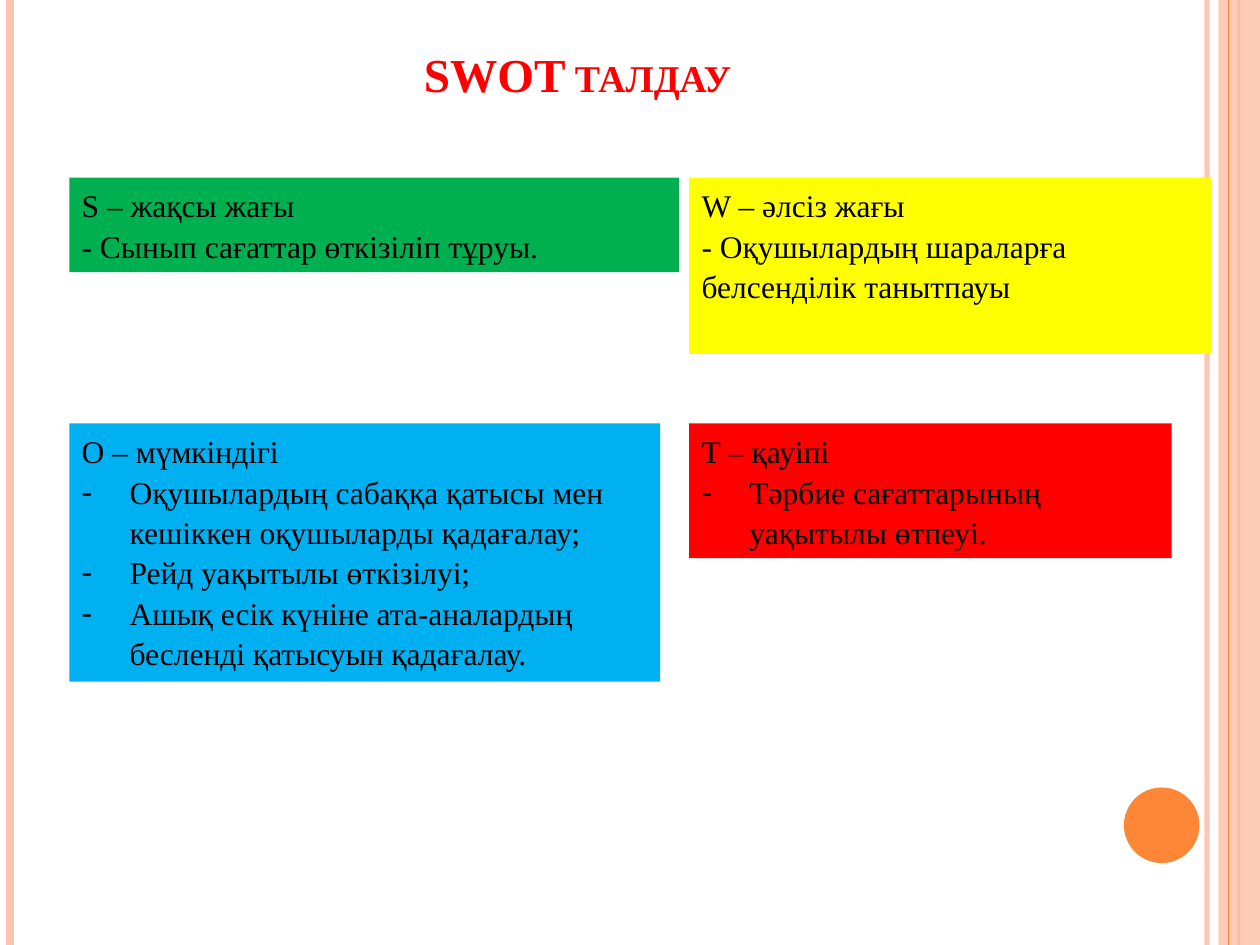
from lxml.etree import SubElement
from pptx import Presentation
from pptx.dml.color import RGBColor
from pptx.enum.shapes import MSO_CONNECTOR, MSO_SHAPE
from pptx.enum.text import MSO_ANCHOR, PP_ALIGN
from pptx.oxml.ns import qn
from pptx.util import Inches, Pt

PEACH = RGBColor(0xFE, 0xC3, 0xAE)
ORANGE = RGBColor(0xFE, 0x86, 0x37)
GREEN = RGBColor(0x00, 0xB0, 0x50)
YELLOW = RGBColor(0xFF, 0xFF, 0x00)
BLUE = RGBColor(0x00, 0xB0, 0xF0)
RED = RGBColor(0xFF, 0x00, 0x00)
BLACK = RGBColor(0x00, 0x00, 0x00)
FONT = "Times New Roman"
WIDTH, HEIGHT = 10, 7.5
LEFT, RIGHT = 0.55, 5.47
TOP, BOTTOM = 1.41, 3.36
INDENT = 0.38

QUADRANTS = [
    (LEFT, TOP, 4.84, 0.75, GREEN,
     ["S – жақсы жағы", "- Сынып сағаттар өткізіліп тұруы."], []),
    (RIGHT, TOP, 4.14, 1.4, YELLOW,
     ["W – әлсіз жағы", "- Оқушылардың шараларға белсенділік танытпауы"], []),
    (LEFT, BOTTOM, 4.69, 2.05, BLUE, ["O – мүмкіндігі"],
     ["Оқушылардың сабаққа қатысы мен кешіккен оқушыларды қадағалау;",
      "Рейд уақытылы өткізілуі;",
      "Ашық есік күніне ата-аналардың бесленді қатысуын қадағалау."]),
    (RIGHT, BOTTOM, 3.83, 1.07, RED, ["T – қауіпі"],
     ["Тәрбие сағаттарының уақытылы өтпеуі."]),
]


def set_alpha(fill_parent, percent):
    color = fill_parent.find(qn("a:solidFill"))[0]
    SubElement(color, qn("a:alpha"), val=str(percent * 1000))


def add_stripe(slide, x, color, width, alpha=100):
    line = slide.shapes.add_connector(
        MSO_CONNECTOR.STRAIGHT, Inches(x), 0, Inches(x), Inches(HEIGHT))
    line.line.color.rgb = color
    line.line.width = Pt(width)
    sp_pr = line._element.spPr
    if alpha < 100:
        set_alpha(sp_pr.find(qn("a:ln")), alpha)
    SubElement(sp_pr, qn("a:effectLst"))


def add_block(slide, kind, left, top, width, height, color):
    sp = slide.shapes.add_shape(
        kind, Inches(left), Inches(top), Inches(width), Inches(height))
    sp.shadow.inherit = False
    sp.fill.solid()
    sp.fill.fore_color.rgb = color
    sp.line.fill.background()
    return sp


def style_run(r, size, color):
    r.font.name = FONT
    r.font.size = Pt(size)
    r.font.color.rgb = color


def add_dash(p):
    p_pr = p._p.get_or_add_pPr()
    p_pr.set("marL", str(Inches(INDENT)))
    p_pr.set("indent", str(-Inches(INDENT)))
    SubElement(p_pr, qn("a:buFont"), typeface=FONT)
    SubElement(p_pr, qn("a:buChar"), char="-")


def add_quadrant(slide, left, top, width, height, color, lines, items):
    sp = add_block(slide, MSO_SHAPE.RECTANGLE, left, top, width, height, color)
    tf = sp.text_frame
    tf.word_wrap = True
    tf.vertical_anchor = MSO_ANCHOR.TOP
    tf.text = "\n".join(lines + items)
    for i, p in enumerate(tf.paragraphs):
        p.alignment = PP_ALIGN.LEFT
        p.line_spacing = 1.07
        style_run(p.runs[0], 18, BLACK)
        if i >= len(lines):
            add_dash(p)


def add_title(slide, text):
    box = slide.shapes.add_textbox(
        Inches(0.5), Inches(0.3), Inches(8.17), Inches(0.56))
    tf = box.text_frame
    tf.word_wrap = True
    tf.vertical_anchor = MSO_ANCHOR.BOTTOM
    tf.text = text
    p = tf.paragraphs[0]
    p.alignment = PP_ALIGN.CENTER
    r = p.runs[0]
    style_run(r, 27, RED)
    r.font.bold = True
    r._r.get_or_add_rPr().set("cap", "small")


def add_frame(slide):
    add_stripe(slide, 9.58, PEACH, 3, 93)
    add_stripe(slide, 0.08, PEACH, 4.5)
    add_stripe(slide, 9.83, ORANGE, 1.5)
    band = add_block(slide, MSO_SHAPE.RECTANGLE, 9.67, 0, WIDTH - 9.67, HEIGHT, PEACH)
    set_alpha(band._element.spPr, 87)
    add_stripe(slide, 9.75, ORANGE, 0.75)
    add_block(slide, MSO_SHAPE.OVAL, 8.92, 6.25, 0.6, 0.6, ORANGE)


def main():
    prs = Presentation()
    prs.slide_width = Inches(WIDTH)
    prs.slide_height = Inches(HEIGHT)
    slide = prs.slides.add_slide(prs.slide_layouts[6])
    add_frame(slide)
    add_title(slide, "SWOT талдау")
    for quadrant in QUADRANTS:
        add_quadrant(slide, *quadrant)
    prs.save("out.pptx")


if __name__ == "__main__":
    main()
